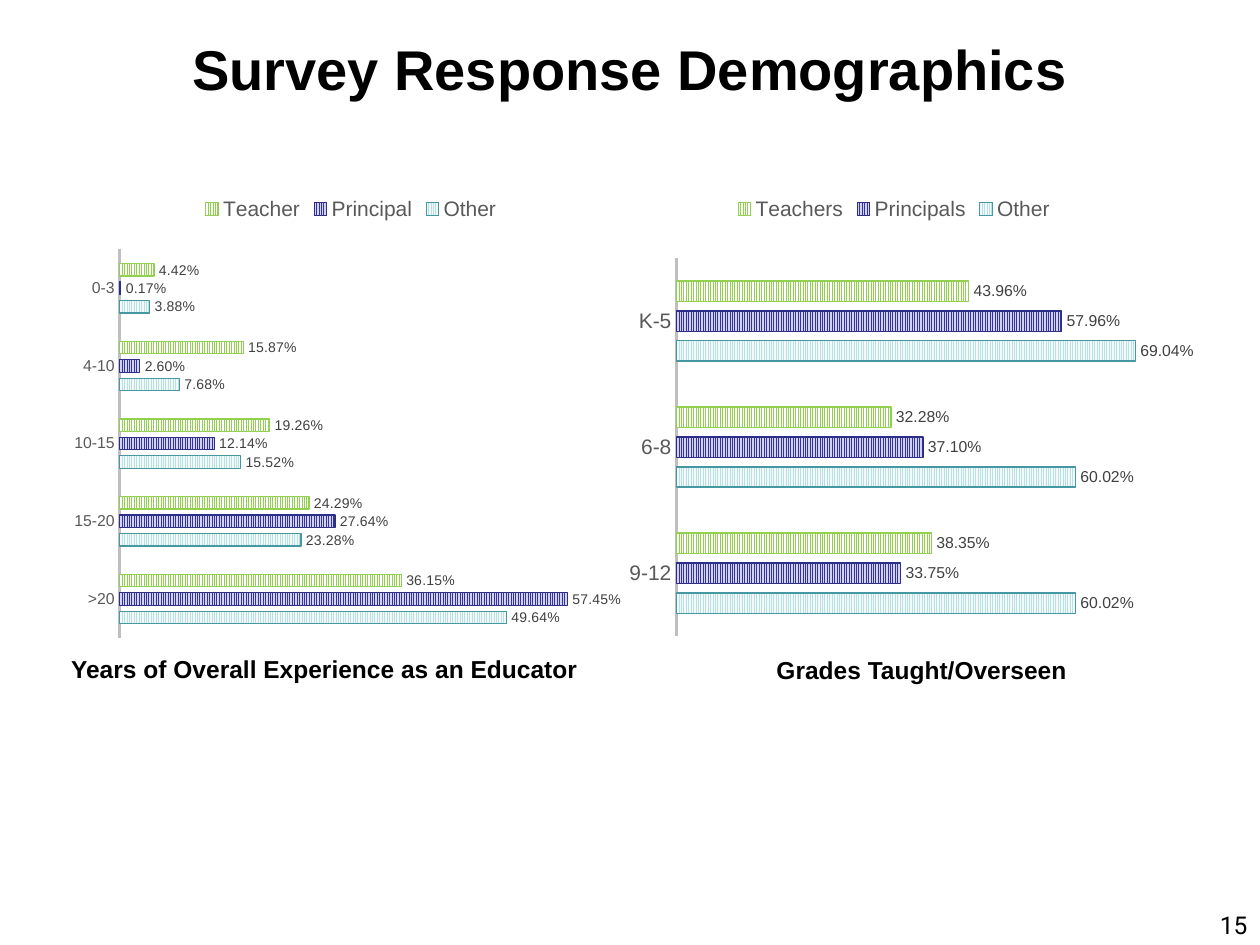
from lxml import etree
from pptx import Presentation
from pptx import util as u
from pptx.chart.data import CategoryChartData
from pptx.dml.color import RGBColor
from pptx.enum import chart as charts, dml, text
from pptx.oxml import parse_xml
from pptx.oxml.ns import nsdecls, qn

BLACK = RGBColor(0x00, 0x00, 0x00)
AXIS_TEXT = RGBColor(0x59, 0x59, 0x59)
AXIS_LINE = RGBColor(0xBF, 0xBF, 0xBF)
LABEL_TEXT = RGBColor(0x40, 0x40, 0x40)
# Stripe, ground and outline for Other, Principal and Teacher
GROUP_COLORS = [
    (RGBColor(0xBB, 0xE0, 0xE3), RGBColor(0xF1, 0xF9, 0xF9), RGBColor(0x45, 0x97, 0xA0)),
    (RGBColor(0x33, 0x33, 0x99), RGBColor(0xD1, 0xD1, 0xF0), RGBColor(0x2D, 0x2D, 0x8A)),
    (RGBColor(0x92, 0xD0, 0x50), RGBColor(0xFF, 0xFF, 0xFF), RGBColor(0x92, 0xD0, 0x50)),
]

EXPERIENCE = {
    "categories": [">20", "15-20", "10-15", "4-10", "0-3"],
    "groups": {
        "Other": [0.4964, 0.2328, 0.1552, 0.0768, 0.0388],
        "Principal": [0.5745, 0.2764, 0.1214, 0.026, 0.0017],
        "Teacher": [0.3615, 0.2429, 0.1926, 0.1587, 0.0442],
    },
}
GRADES = {
    "categories": ["9-12", "6-8", "K-5"],
    "groups": {
        "Other": [0.6002, 0.6002, 0.6904],
        "Principals": [0.3375, 0.371, 0.5796],
        "Teachers": [0.3835, 0.3228, 0.4396],
    },
}


def inches(box):
    return [u.Inches(length) for length in box]


def style_font(font, size, color, name="Arial", bold=False):
    font.name, font.size, font.bold = name, u.Pt(size), bold
    font.color.rgb = color


def fill_title(slide, box, wording):
    title = slide.shapes.title
    title.left, title.top, title.width, title.height = inches(box)
    title.text_frame.vertical_anchor = text.MSO_ANCHOR.MIDDLE
    paragraph = title.text_frame.paragraphs[0]
    paragraph.alignment = text.PP_ALIGN.CENTER
    paragraph.line_spacing = u.Pt(36)
    run = paragraph.add_run()
    run.text = wording
    style_font(run.font, 32, BLACK, bold=True)


def add_line_of_text(slide, box, wording, alignment, **font):
    frame = slide.shapes.add_textbox(*inches(box)).text_frame
    frame.word_wrap = True
    paragraph = frame.paragraphs[0]
    paragraph.alignment = alignment
    run = paragraph.add_run()
    run.text = wording
    style_font(run.font, 14, BLACK, **font)


def place_plot(chart, plot_box):
    """Fix the inner plot area, in fractions of the chart, and clear the backdrop."""
    space = chart.font._element.getroottree().getroot()
    plot_area = space.find(".//" + qn("c:plotArea"))
    for old in plot_area.findall(qn("c:layout")):
        plot_area.remove(old)
    layout = parse_xml(f"<c:layout {nsdecls('c')}><c:manualLayout/></c:layout>")
    settings = [("layoutTarget", "inner"), ("xMode", "edge"), ("yMode", "edge")]
    settings += zip("xywh", plot_box)
    for tag, value in settings:
        etree.SubElement(layout[0], qn(f"c:{tag}")).set("val", str(value))
    plot_area.insert(0, layout)
    clear = f"<c:spPr {nsdecls('c', 'a')}><a:noFill/><a:ln><a:noFill/></a:ln></c:spPr>"
    space.find(qn("c:txPr")).addprevious(parse_xml(clear))


def style_series(series, colors, label_size):
    stripe, ground, outline = colors
    fill = series.format.fill
    fill.patterned()
    fill.pattern = dml.MSO_PATTERN.NARROW_VERTICAL
    fill.fore_color.rgb, fill.back_color.rgb = stripe, ground
    series.format.line.color.rgb = outline
    series.format.line.width = u.Pt(0.75)
    series.invert_if_negative = False
    labels = series.data_labels
    labels.show_value = True
    labels.number_format, labels.number_format_is_linked = "0.00%", False
    labels.position = charts.XL_LABEL_POSITION.OUTSIDE_END
    style_font(labels.font, label_size, LABEL_TEXT)


def add_survey_chart(slide, box, survey, plot_box, maximum, category_size, label_size):
    data = CategoryChartData(number_format="0.00%")
    data.categories = survey["categories"]
    for group, shares in survey["groups"].items():
        data.add_series(group, shares)
    chart = slide.shapes.add_chart(
        charts.XL_CHART_TYPE.BAR_CLUSTERED, *inches(box), data).chart
    chart.has_title = False
    style_font(chart.font, 10, BLACK)
    place_plot(chart, plot_box)

    chart.has_legend = True
    chart.legend.position = charts.XL_LEGEND_POSITION.TOP
    chart.legend.include_in_layout = False
    style_font(chart.legend.font, 12, AXIS_TEXT)

    categories = chart.category_axis
    categories.major_tick_mark = charts.XL_TICK_MARK.NONE
    categories.format.line.color.rgb = AXIS_LINE
    categories.format.line.width = u.Pt(1.5)
    style_font(categories.tick_labels.font, category_size, AXIS_TEXT)

    shares_axis = chart.value_axis
    shares_axis.visible = False
    shares_axis.has_major_gridlines = False
    shares_axis.minimum_scale, shares_axis.maximum_scale = 0, maximum

    bars = chart.plots[0]
    bars.vary_by_categories = False
    bars.gap_width, bars.overlap = 227, -48
    for series, colors in zip(bars.series, GROUP_COLORS):
        style_series(series, colors, label_size)


def main():
    deck = Presentation()
    deck.slide_width, deck.slide_height = u.Inches(10), u.Inches(7.5)
    slide = deck.slides.add_slide(deck.slide_layouts[5])
    center, right = text.PP_ALIGN.CENTER, text.PP_ALIGN.RIGHT

    fill_title(slide, (0.5, 0.15, 9, 0.82), "Survey Response Demographics")
    add_line_of_text(slide, (7.67, 7.17, 2.33, 0.33), "15", right, name="Roboto")
    add_survey_chart(slide, (0.29, 1.46, 4.99, 3.85), EXPERIENCE,
                     (0.132, 0.135, 0.868, 0.801), 0.7, category_size=9, label_size=8)
    add_line_of_text(slide, (5.13, 5.15, 4.37, 0.34), "Grades Taught/Overseen",
                     center, bold=True)
    add_survey_chart(slide, (4.6, 1.46, 4.99, 3.6), GRADES,
                     (0.154, 0.164, 0.846, 0.836), 0.8, category_size=12, label_size=9)
    add_line_of_text(slide, (0.39, 5.14, 4.37, 0.34),
                     "Years of Overall Experience as an Educator", center, bold=True)
    deck.save("out.pptx")


if __name__ == "__main__":
    main()
